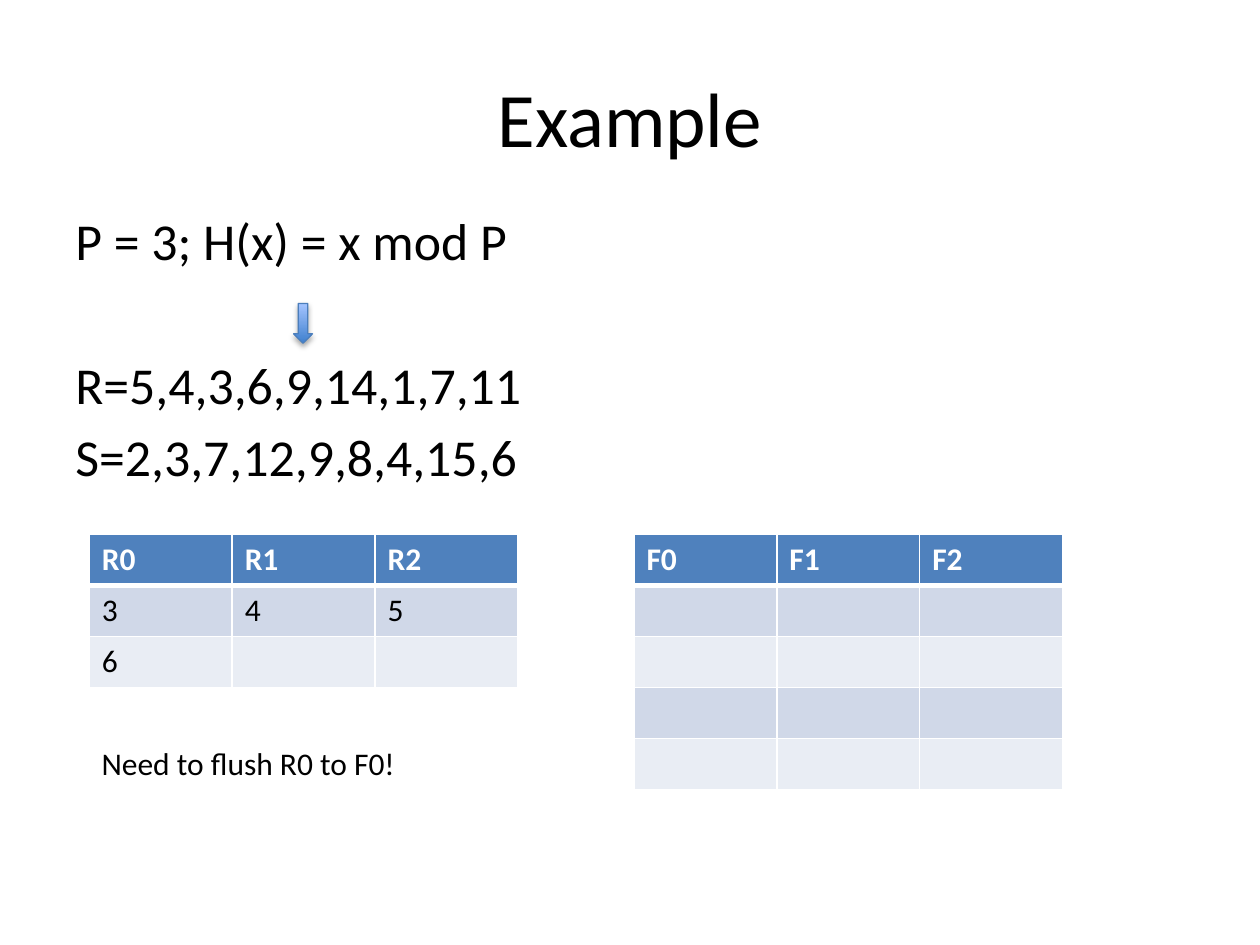
from lxml.etree import SubElement
from pptx import Presentation
from pptx.dml.color import RGBColor
from pptx.enum.shapes import MSO_SHAPE as Preset
from pptx.enum.text import MSO_ANCHOR as Anchor, PP_ALIGN as Align
from pptx.oxml import parse_xml
from pptx.oxml.ns import nsdecls, qn
from pptx.util import Cm, Pt

COLORS = {
    "text": "000000",
    "white": "FFFFFF",
    "header": "4F81BD",
    "odd_row": "D0D8E8",
    "even_row": "E9EDF4",
    "arrow_dark": "3F80CE",
    "arrow_light": "A4C4FF",
    "arrow_line": "4B7EBC",
}


def write(frame, text, size=18, color="text", bold=False, align=Align.LEFT,
          anchor=Anchor.TOP, before=()):
    """Put each line of text in its own paragraph; before lists the gaps in points."""
    frame.word_wrap = True
    frame.vertical_anchor = anchor
    for index, line in enumerate(text.split("\n")):
        para = frame.add_paragraph() if index else frame.paragraphs[0]
        para.alignment = align
        if before:
            para.space_before = Pt(before[index])
        span = para.add_run()
        span.text = line
        span.font.name = "Calibri"
        span.font.size = Pt(size)
        span.font.bold = bold
        span.font.color.rgb = RGBColor.from_string(COLORS[color])


def add_border(cell, side, width):
    line = SubElement(cell._tc.get_or_add_tcPr(), qn(f"a:ln{side}"), w=str(Pt(width)))
    fill = SubElement(line, qn("a:solidFill"))
    SubElement(fill, qn("a:srgbClr"), val=COLORS["white"])


deck = Presentation()
deck.slide_width, deck.slide_height = Cm(25.4), Cm(19.05)
page = deck.slides.add_slide(deck.slide_layouts[6])

# Title, relations and remark
title = page.shapes.add_textbox(Cm(1.27), Cm(0.76), Cm(22.86), Cm(3.18))
write(title.text_frame, "Example", size=44, align=Align.CENTER, anchor=Anchor.MIDDLE)

relations = page.shapes.add_textbox(Cm(1.27), Cm(4.09), Cm(22.86), Cm(5.61))
write(relations.text_frame,
      "P = 3; H(x) = x mod P\nR=5,4,3,6,9,14,1,7,11\nS=2,3,7,12,9,8,4,15,6",
      size=29.6, before=(5.3, 46.7, 5.3))

remark = page.shapes.add_textbox(Cm(1.8), Cm(14.88), Cm(8.1), Cm(1.02))
write(remark.text_frame, "Need to flush R0 to F0!")

# Bucket tables: memory on the left, files on the right
COLUMN_WIDTH, ROW_HEIGHT = Cm(2.88), Cm(1.03)
buckets = [
    (Cm(1.8), [["R0", "R1", "R2"], ["3", "4", "5"], ["6", "", ""]]),
    (Cm(12.78), [["F0", "F1", "F2"]] + [[""] * 3] * 4),
]
for left, rows in buckets:
    table = page.shapes.add_table(len(rows), 3, left, Cm(10.77),
                                  COLUMN_WIDTH * 3, ROW_HEIGHT * len(rows)).table
    for column in table.columns:
        column.width = COLUMN_WIDTH
    for r, values in enumerate(rows):
        table.rows[r].height = ROW_HEIGHT
        is_header = r == 0
        fill_name = "header" if is_header else "odd_row" if r % 2 else "even_row"
        for c, value in enumerate(values):
            cell = table.cell(r, c)
            for side in "LRTB":
                thick = (is_header and side == "B") or (r == 1 and side == "T")
                add_border(cell, side, 3 if thick else 1)
            cell.fill.solid()
            cell.fill.fore_color.rgb = RGBColor.from_string(COLORS[fill_name])
            if value:
                write(cell.text_frame, value, bold=is_header,
                      color="white" if is_header else "text")

# Arrow marking the current value of R
arrow = page.shapes.add_shape(Preset.DOWN_ARROW, Cm(5.92), Cm(6.12), Cm(0.38), Cm(0.8))
arrow.fill.gradient()
arrow.fill.gradient_angle = 90
for stop, name, position in zip(arrow.fill.gradient_stops,
                                ("arrow_dark", "arrow_light"), (0, 1)):
    stop.color.rgb = RGBColor.from_string(COLORS[name])
    stop.position = position
arrow.line.color.rgb = RGBColor.from_string(COLORS["arrow_line"])
arrow.line.width = Pt(0.75)
arrow._element.spPr.append(parse_xml(
    f'<a:effectLst {nsdecls("a")}>'
    f'<a:outerShdw blurRad="{Pt(3.1)}" dist="{Pt(1.8)}" dir="5400000" rotWithShape="0">'
    f'<a:srgbClr val="{COLORS["text"]}"><a:alpha val="35000"/></a:srgbClr>'
    "</a:outerShdw></a:effectLst>"))

deck.save("out.pptx")
